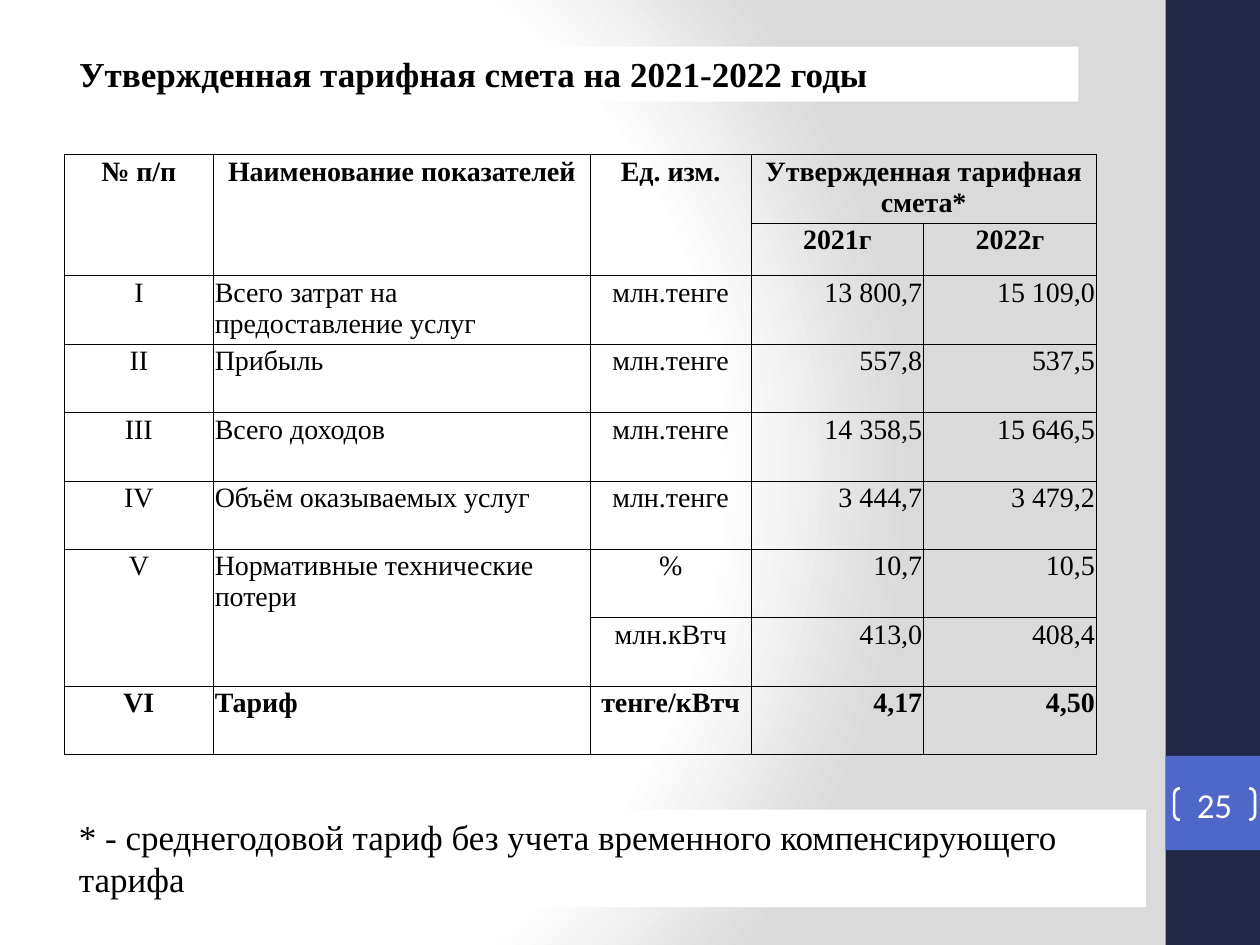
from lxml.etree import SubElement
from pptx import Presentation
from pptx.dml.color import RGBColor
from pptx.enum.shapes import MSO_SHAPE as SHAPE
from pptx.enum.text import MSO_ANCHOR as ANCHOR, MSO_AUTO_SIZE as AUTO, PP_ALIGN as ALIGN
from pptx.oxml import parse_xml
from pptx.oxml.ns import nsdecls, qn
from pptx.util import Cm, Pt

COLORS = {"white": "FFFFFF", "black": "000000", "grey": "DADADA",
          "navy": "212745", "blue": "4E67C8"}
SERIF = "Times New Roman"
UNIT = "млн.тенге"
ROWS = [
    ["№ п/п", "Наименование показателей", "Ед. изм.", "Утвержденная тарифная смета*", ""],
    ["", "", "", "2021г", "2022г"],
    ["I", "Всего затрат на предоставление услуг", UNIT, "13 800,7", "15 109,0"],
    ["II", "Прибыль", UNIT, "557,8", "537,5"],
    ["III", "Всего доходов", UNIT, "14 358,5", "15 646,5"],
    ["IV", "Объём оказываемых услуг", UNIT, "3 444,7", "3 479,2"],
    ["V", "Нормативные технические потери", "%", "10,7", "10,5"],
    ["", "", "млн.кВтч", "413,0", "408,4"],
    ["VI", "Тариф", "тенге/кВтч", "4,17", "4,50"],
]
HEADER_ROWS = 2
MERGES = [((0, 0), (1, 0)), ((0, 1), (1, 1)), ((0, 2), (1, 2)), ((0, 3), (0, 4)),
          ((6, 0), (7, 0)), ((6, 1), (7, 1))]
COL_WIDTHS = [3, 7.6, 3.24, 3.48, 3.48]
ROW_HEIGHTS = [1.38, 1.06] + [1.38] * 7
COL_ALIGNS = [ALIGN.CENTER, ALIGN.LEFT, ALIGN.CENTER, ALIGN.RIGHT, ALIGN.RIGHT]


def color(name):
    """Return the named colour."""
    return RGBColor.from_string(COLORS[name])


def write(tf, text, size, font=SERIF, ink="black", bold=False, align=ALIGN.LEFT):
    """Write one formatted run into the first paragraph."""
    p = tf.paragraphs[0]
    p.alignment = align
    r = p.add_run()
    r.text = text
    r.font.size, r.font.name, r.font.bold = Pt(size), font, bold
    r.font.color.rgb = color(ink)


def add_block(slide, kind, box, fill=None):
    """Add a shape without outline or shadow, filled when a colour is named."""
    sp = slide.shapes.add_shape(kind, *map(Cm, box))
    sp.shadow.inherit = False
    sp.line.fill.background()
    if fill:
        sp.fill.solid()
        sp.fill.fore_color.rgb = color(fill)
    else:
        sp.fill.background()
    return sp


def set_background(slide):
    """Fill the background with a circular gradient."""
    slide.background.fill.solid()
    bg = next(slide.element.iter(qn("p:bgPr")))
    stops = "".join(
        f'<a:gs pos="{pos}"><a:srgbClr val="{COLORS[name]}"/></a:gs>'
        for pos, name in [(0, "white"), (75000, "white"), (100000, "grey")])
    grad = parse_xml(
        f'<a:gradFill {nsdecls("a")} rotWithShape="1"><a:gsLst>{stops}</a:gsLst>'
        '<a:path path="circle"><a:fillToRect l="20000" t="50000" r="100000" b="50000"/>'
        '</a:path></a:gradFill>')
    bg.replace(bg.find(qn("a:solidFill")), grad)


def add_sidebar(slide, box, number):
    """Draw the side band with its page number badge."""
    x, y, w, h = box
    add_block(slide, SHAPE.RECTANGLE, box, "navy")
    badge_y = y + h * 0.8
    add_block(slide, SHAPE.RECTANGLE, (x, badge_y, w, w), "blue")
    sp = add_block(slide, SHAPE.DOUBLE_BRACKET, (x + 0.17, badge_y + 0.65, 1.63, 0.64))
    sp.adjustments[0] = 0.18
    sp.line.color.rgb = color("white")
    sp.line.width = Pt(1.5)
    tf = sp.text_frame
    tf.margin_left = tf.margin_right = tf.margin_top = tf.margin_bottom = 0
    tf.vertical_anchor = ANCHOR.MIDDLE
    write(tf, number, 20, "Calibri", "white", align=ALIGN.CENTER)


def add_title(slide, box, text):
    """Place the title placeholder on a white band."""
    sp = slide.shapes.title
    sp.left, sp.top, sp.width, sp.height = map(Cm, box)
    sp.fill.solid()
    sp.fill.fore_color.rgb = color("white")
    tf = sp.text_frame
    tf.word_wrap, tf.auto_size, tf.vertical_anchor = True, AUTO.NONE, ANCHOR.TOP
    write(tf, text, 20, bold=True)


def add_footnote(slide, box, text):
    """Place the footnote on a white band."""
    tf = add_block(slide, SHAPE.RECTANGLE, box, "white").text_frame
    tf.word_wrap, tf.vertical_anchor = True, ANCHOR.TOP
    write(tf, text, 20)


def set_borders(cell):
    """Draw thin black lines on all four sides of a cell."""
    pr = cell._tc.get_or_add_tcPr()
    for i, side in enumerate("LRTB"):
        ln = pr.makeelement(qn(f"a:ln{side}"), {"w": str(Pt(0.5))})
        fill = SubElement(ln, qn("a:solidFill"))
        SubElement(fill, qn("a:srgbClr"), val=COLORS["black"])
        pr.insert(i, ln)


def add_tariff_table(slide, x, y):
    """Build the tariff table from its top left corner."""
    size = sum(COL_WIDTHS), sum(ROW_HEIGHTS)
    table = slide.shapes.add_table(len(ROWS), len(COL_WIDTHS),
                                   *map(Cm, (x, y, *size))).table
    table.first_row = table.horz_banding = False
    for col, width in zip(table.columns, COL_WIDTHS):
        col.width = Cm(width)
    for row, height in zip(table.rows, ROW_HEIGHTS):
        row.height = Cm(height)
    for i, texts in enumerate(ROWS):
        header = i < HEADER_ROWS
        for j, text in enumerate(texts):
            cell = table.cell(i, j)
            cell.fill.background()
            set_borders(cell)
            cell.margin_left = cell.margin_right = cell.margin_top = Cm(0.03)
            cell.margin_bottom = 0
            if text:
                write(cell.text_frame, text, 16, bold=header or i == len(ROWS) - 1,
                      align=ALIGN.CENTER if header else COL_ALIGNS[j])
    for first, last in MERGES:
        table.cell(*first).merge(table.cell(*last))


def main():
    """Build and save the slide."""
    prs = Presentation()
    prs.slide_width, prs.slide_height = Cm(25.4), Cm(19.05)
    slide = prs.slides.add_slide(prs.slide_layouts[5])
    set_background(slide)
    add_sidebar(slide, (23.5, 0, 1.9, 19.05), "25")
    add_footnote(slide, (1.34, 16.32, 21.76, 1.97),
                 "* - среднегодовой тариф без учета временного компенсирующего тарифа")
    add_tariff_table(slide, 1.3, 3.12)
    add_title(slide, (1.34, 0.94, 20.4, 1.11),
              "Утвержденная тарифная смета на 2021-2022 годы")
    prs.save("out.pptx")


if __name__ == "__main__":
    main()
